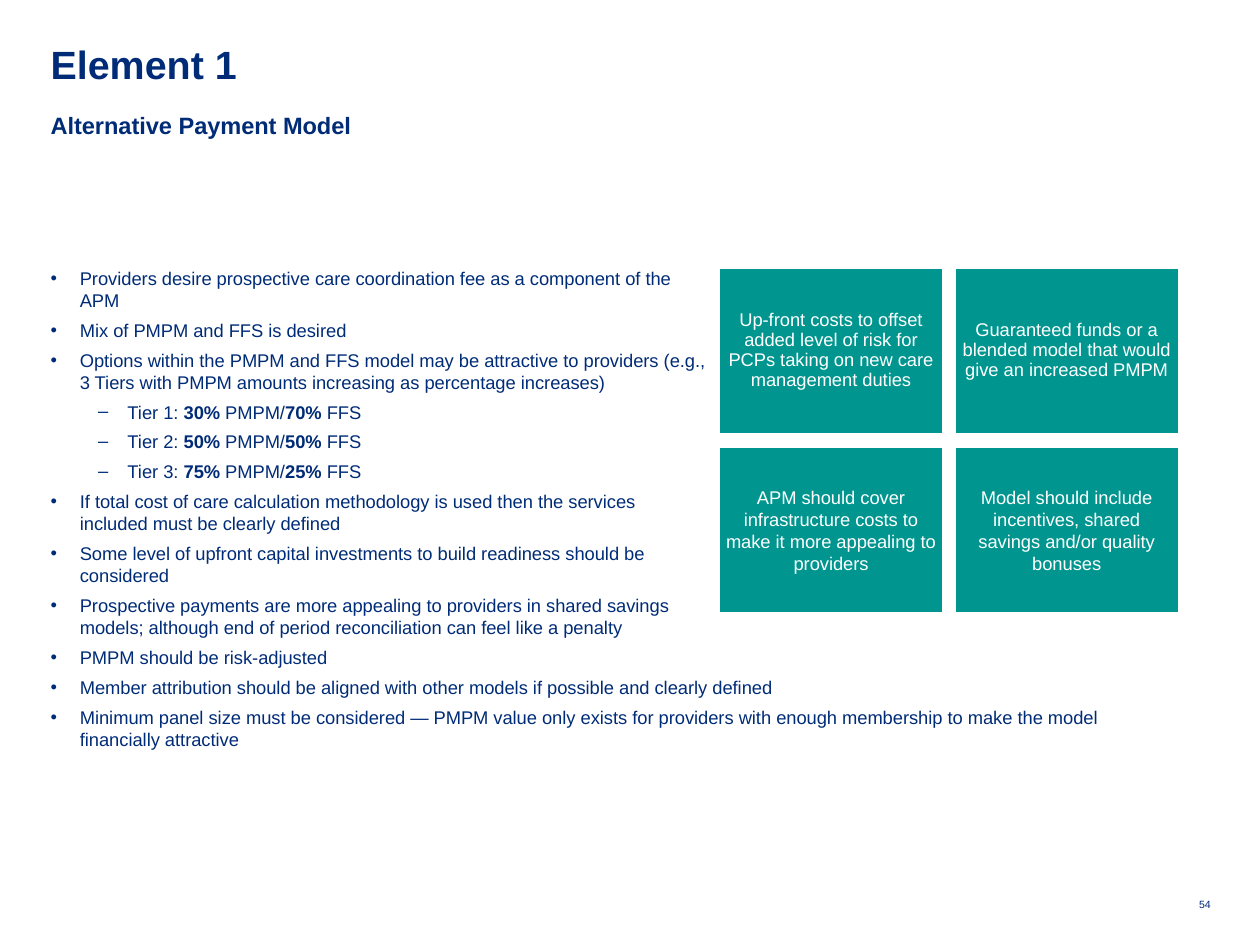
from dataclasses import dataclass

from lxml import etree
from pptx import Presentation
from pptx.dml.color import RGBColor
from pptx.enum.shapes import MSO_SHAPE
from pptx.enum.text import MSO_ANCHOR, MSO_AUTO_SIZE, PP_ALIGN
from pptx.oxml.ns import qn
from pptx.util import Cm, Pt

RECTANGLE = MSO_SHAPE.RECTANGLE
TOP, MIDDLE = MSO_ANCHOR.TOP, MSO_ANCHOR.MIDDLE
NO_AUTOFIT = MSO_AUTO_SIZE.NONE
LEFT, CENTER, RIGHT = PP_ALIGN.LEFT, PP_ALIGN.CENTER, PP_ALIGN.RIGHT


@dataclass(frozen=True)
class Theme:
    navy: RGBColor = RGBColor(0x00, 0x2C, 0x77)
    teal: RGBColor = RGBColor(0x00, 0x96, 0x8F)
    white: RGBColor = RGBColor(0xFF, 0xFF, 0xFF)
    font: str = "Arial"
    title: Pt = Pt(22.5)
    subtitle: Pt = Pt(13.5)
    body: Pt = Pt(10.5)
    page: Pt = Pt(6)
    gap: Pt = Pt(4.5)


theme = Theme()


def place(shape, left, top, width, height, inset=0, anchor=TOP):
    """Position a shape and set up its text frame."""
    shape.left, shape.top = Cm(left), Cm(top)
    shape.width, shape.height = Cm(width), Cm(height)
    frame = shape.text_frame
    frame.word_wrap = True
    frame.auto_size = NO_AUTOFIT
    frame.vertical_anchor = anchor
    frame.margin_left = frame.margin_right = Cm(inset)
    frame.margin_top = frame.margin_bottom = Cm(inset)
    return frame


def style(paragraph, size, color=theme.navy, bold=False, align=LEFT, after=0, bullet=None, indent=0):
    """Format a paragraph and its runs, with an optional hanging bullet."""
    paragraph.alignment = align
    paragraph.space_before = Pt(0)
    paragraph.space_after = after
    if bullet:
        properties = paragraph._p.get_or_add_pPr()
        properties.set("marL", str(Cm(indent)))
        properties.set("indent", str(-Cm(0.59)))
        etree.SubElement(properties, qn("a:buFont"), typeface=theme.font)
        etree.SubElement(properties, qn("a:buChar"), char=bullet)
    for run in paragraph.runs:
        run.font.name = theme.font
        run.font.size = size
        run.font.color.rgb = color
        run.font.bold = bold


presentation = Presentation()
presentation.slide_width, presentation.slide_height = Cm(25.4), Cm(19.05)
slide = presentation.slides.add_slide(presentation.slide_layouts.get_by_name("Comparison"))
subtitle, main_list, spare, closing_list = [slide.placeholders[i] for i in (1, 2, 3, 4)]
spare.element.getparent().remove(spare.element)

# Headings
heading = place(slide.shapes.title, 1.02, 0.99, 23.39, 1.37)
heading.text = "Element 1"
style(heading.paragraphs[0], theme.title, bold=True)
heading.paragraphs[0].line_spacing = 0.8

subheading = place(subtitle, 1.02, 2.24, 23.39, 0.89)
subheading.text = "Alternative Payment Model"
style(subheading.paragraphs[0], theme.subtitle, bold=True, after=theme.gap)

# Bullet lists: a tuple is a tier with its PMPM and FFS shares
main_points = [
    "Providers desire prospective care coordination fee as a component of the APM",
    "Mix of PMPM and FFS is desired",
    "Options within the PMPM and FFS model may be attractive to providers "
    "(e.g., 3 Tiers with PMPM amounts increasing as percentage increases)",
    (1, 30, 70),
    (2, 50, 50),
    (3, 75, 25),
    "If total cost of care calculation methodology is used then the services "
    "included must be clearly defined",
    "Some level of upfront capital investments to build readiness should be considered",
    "Prospective payments are more appealing to providers in shared savings models; "
    "although end of period reconciliation can feel like a penalty",
    "PMPM should be risk-adjusted",
]
closing_points = [
    "Member attribution should be aligned with other models if possible and clearly defined",
    "Minimum panel size must be considered — PMPM value only exists for providers "
    "with enough membership to make the model financially attractive",
]
lists = [
    (place(main_list, 1.02, 5.38, 13.23, 8.33), main_points),
    (place(closing_list, 1.02, 13.64, 22.78, 1.52), closing_points),
]
for frame, points in lists:
    for number, point in enumerate(points):
        paragraph = frame.add_paragraph() if number else frame.paragraphs[0]
        if isinstance(point, tuple):
            tier, pmpm, ffs = point
            paragraph.level = 1
            for part in (f"Tier {tier}: ", f"{pmpm}%", " PMPM/", f"{ffs}% ", "FFS"):
                paragraph.add_run().text = part
            style(paragraph, theme.body, after=theme.gap, bullet="–", indent=1.55)
            for share in paragraph.runs[1::2]:
                share.font.bold = True
        else:
            paragraph.text = point
            style(paragraph, theme.body, after=theme.gap, bullet="•", indent=0.59)

# Two by two grid of provider requests, with tighter lines in the top row
requests = [
    "Up-front costs to offset added level of risk for PCPs taking on new care management duties",
    "Guaranteed funds or a blended model that would give an increased PMPM",
    "APM should cover infrastructure costs to make it more appealing to providers",
    "Model should include incentives, shared savings and/or quality bonuses",
]
for number, request in enumerate(requests):
    row, column = divmod(number, 2)
    box = (14.48 + column * 4.75, 5.38 + row * 3.61, 4.55, 3.38)
    card = slide.shapes.add_shape(RECTANGLE, *[Cm(length) for length in box])
    card.shadow.inherit = False
    card.fill.solid()
    card.fill.fore_color.rgb = theme.teal
    card.line.color.rgb = theme.white
    card.line.width = Pt(2)
    frame = place(card, *box, inset=0.15, anchor=MIDDLE)
    frame.text = request
    style(frame.paragraphs[0], theme.body, theme.white, align=CENTER)
    frame.paragraphs[0].line_spacing = 1.0 if row else 0.9

# Page number
page_box = (23.83, 18.11, 0.58, 0.25)
page_number = slide.shapes.add_textbox(*[Cm(length) for length in page_box])
frame = place(page_number, *page_box)
frame.text = "54"
style(frame.paragraphs[0], theme.page, align=RIGHT)

presentation.save("out.pptx")
